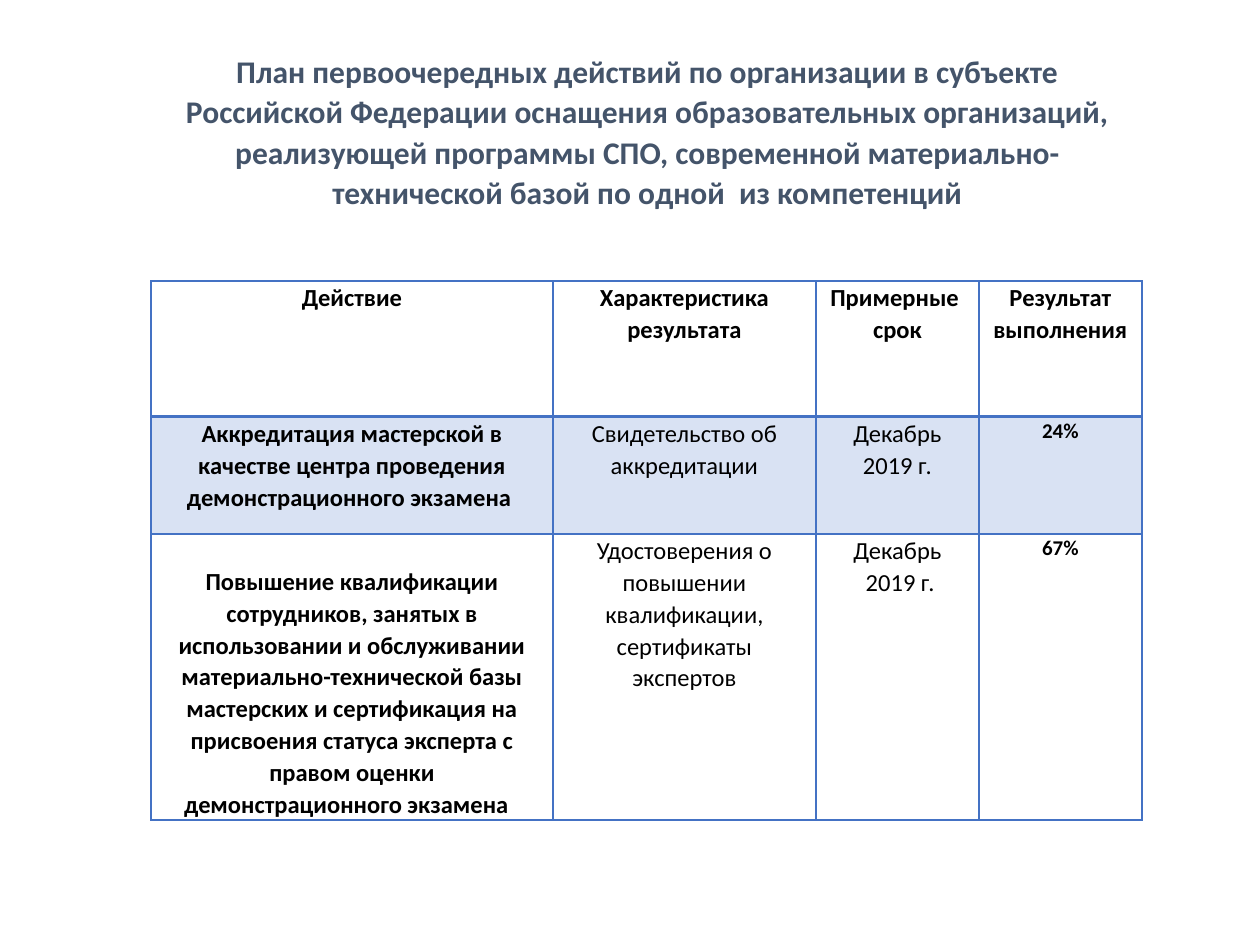
from dataclasses import dataclass

from lxml.etree import SubElement
from pptx import Presentation
from pptx.dml.color import RGBColor
from pptx.enum.text import MSO_ANCHOR, MSO_AUTO_SIZE, PP_ALIGN
from pptx.oxml.ns import qn
from pptx.util import Pt

PX = 914400 // 126  # EMU per px


@dataclass(frozen=True)
class Theme:
    font: str = "Calibri"
    title_color: str = "44546A"
    text_color: str = "000000"
    accent: str = "4472C4"
    band_alpha: int = 20
    title_size: int = 18
    body_size: int = 14
    percent_size: int = 12
    line_spacing: float = 1.07


theme = Theme()


def format_paragraph(paragraph, size, color, bold):
    paragraph.alignment = PP_ALIGN.CENTER
    paragraph.line_spacing = theme.line_spacing
    paragraph.font.name = theme.font
    paragraph.font.size = Pt(size)
    paragraph.font.bold = bold
    paragraph.font.color.rgb = RGBColor.from_string(color)


def add_border(cell, side, width):
    properties = cell._tc.get_or_add_tcPr()
    line = SubElement(properties, qn(f"a:ln{side}"), w=str(Pt(width)))
    fill = SubElement(line, qn("a:solidFill"))
    SubElement(fill, qn("a:srgbClr"), val=theme.accent)


presentation = Presentation()
presentation.slide_width = 1260 * PX
presentation.slide_height = 945 * PX
slide = presentation.slides.add_slide(presentation.slide_layouts[5])

# Title
title = slide.shapes.title
title.left, title.top, title.width, title.height = (
    173 * PX, 43 * PX, 949 * PX, 174 * PX)
title_frame = title.text_frame
title_frame.text = (
    "План первоочередных действий по организации в субъекте Российской "
    "Федерации оснащения образовательных организаций, реализующей программы "
    "СПО, современной материально-технической базой по одной  из компетенций")
title_frame.word_wrap = True
title_frame.auto_size = MSO_AUTO_SIZE.NONE
title_frame.vertical_anchor = MSO_ANCHOR.TOP
format_paragraph(title_frame.paragraphs[0], theme.title_size,
                 theme.title_color, True)

# Action plan table
plan = [
    ["Действие", "Характеристика результата", "Примерные \nсрок",
     "Результат выполнения"],
    ["Аккредитация мастерской в качестве центра проведения "
     "демонстрационного экзамена ",
     "Свидетельство об аккредитации", "Декабрь\n2019 г.", "24%"],
    ["Повышение квалификации сотрудников, занятых в использовании и "
     "обслуживании материально-технической базы мастерских и сертификация "
     "на присвоения статуса эксперта с правом оценки демонстрационного "
     "экзамена  ",
     "Удостоверения о повышении квалификации, сертификаты экспертов",
     "Декабрь\n 2019 г.", "67%"],
]
column_widths = [402, 263, 163, 163]
row_heights = [136, 117, 285]
action_column, percent_column = 0, 3

table = slide.shapes.add_table(
    len(plan), len(column_widths), 151 * PX, 281 * PX,
    sum(column_widths) * PX, sum(row_heights) * PX).table
table.first_row = False
table.horz_banding = False
for column, width in zip(table.columns, column_widths):
    column.width = width * PX
for row, height in zip(table.rows, row_heights):
    row.height = height * PX

for row_index, texts in enumerate(plan):
    is_header = row_index == 0
    for column_index, text in enumerate(texts):
        cell = table.cell(row_index, column_index)
        cell.text = text
        cell.margin_left = cell.margin_right = 9 * PX
        cell.margin_top = cell.margin_bottom = 0

        # Text
        is_percent = not is_header and column_index == percent_column
        size = theme.percent_size if is_percent else theme.body_size
        bold = is_header or column_index in (action_column, percent_column)
        for paragraph in cell.text_frame.paragraphs:
            format_paragraph(paragraph, size, theme.text_color, bold)

        # Borders, heavier under the header
        for side in "LRTB":
            under_header = (row_index, side) in ((0, "B"), (1, "T"))
            add_border(cell, side, 2 if under_header else 1)

        # Tinted middle row
        if row_index == 1:
            cell.fill.solid()
            cell.fill.fore_color.rgb = RGBColor.from_string(theme.accent)
            tint = cell._tc.tcPr.find(
                f"{qn('a:solidFill')}/{qn('a:srgbClr')}")
            SubElement(tint, qn("a:alpha"), val=str(theme.band_alpha * 1000))
        else:
            cell.fill.background()

# The last action starts one line lower
table.cell(2, action_column).margin_top = 31 * PX

presentation.save("out.pptx")
